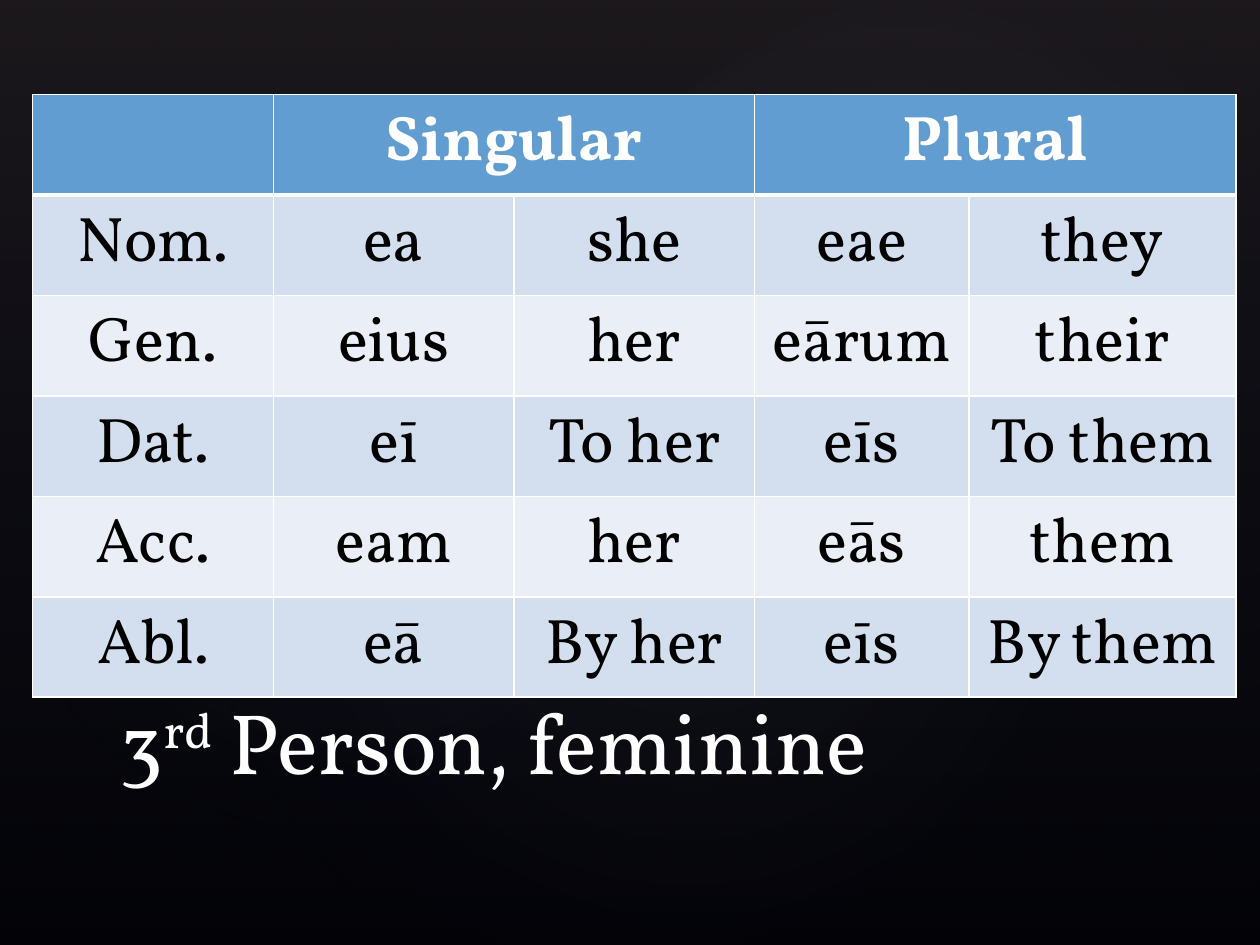
"""Build a slide that declines the feminine third-person Latin pronoun."""
from typing import NamedTuple

import lxml.etree
import pptx
import pptx.dml.color
import pptx.enum.shapes
import pptx.enum.text
import pptx.oxml
import pptx.oxml.ns
import pptx.util

Inches = pptx.util.Inches
FONT = "Vollkorn"
COLORS = {
    "background": "000000", "header": "629DD1", "band": "D3DFEE",
    "light_band": "EAEFF7", "text": "000000", "white": "FFFFFF",
    "shade": "504652", "navy": "242852", "glow": "C4BCC6",
}
COLUMN_WIDTHS = [1.91, 1.91, 1.91, 1.7, 2.12]
ROW_HEIGHT = 0.79
ROWS = [
    ["", "Singular", "", "Plural", ""],
    ["Nom.", "ea", "she", "eae", "they"],
    ["Gen.", "eius", "her", "eārum", "their"],
    ["Dat.", "eī", "To her", "eīs", "To them"],
    ["Acc.", "eam", "her", "eās", "them"],
    ["Abl.", "eā", "By her", "eīs", "By them"],
]


class Stop(NamedTuple):
    position: int
    color: str
    opacity: int


class Backdrop(NamedTuple):
    shape_type: pptx.enum.shapes.MSO_SHAPE
    left: float
    top: float
    width: float
    height: float
    rotation: float
    stops: list[Stop]
    direction: str


LINEAR = '<a:lin ang="5400000" scaled="0"/>'
RADIAL = '<a:path path="circle"><a:fillToRect l="50000" t="50000" r="50000" b="50000"/></a:path>'
OVAL = pptx.enum.shapes.MSO_SHAPE.OVAL


def glow(left: float, top: float, width: float, height: float, rotation: float, opacity: int) -> Backdrop:
    """Describe a soft oval that fades outward."""
    stops = [Stop(0, "glow", opacity), Stop(58, "navy", 0)]
    return Backdrop(OVAL, left, top, width, height, rotation, stops, RADIAL)


BACKDROPS = [
    Backdrop(pptx.enum.shapes.MSO_SHAPE.RECTANGLE, 0, 0, 10, 7.5, 0,
             [Stop(0, "shade", 36), Stop(100, "navy", 10)], LINEAR),
    glow(1.5, 1.14, 7.92, 6.24, 328.7, 7),
    glow(-0.3, 1.28, 6.06, 4.9, 294.3, 8),
    glow(3.58, 0.13, 7.09, 5.2, 328.7, 8),
]


def rgb(name: str) -> pptx.dml.color.RGBColor:
    """Look up a named color."""
    return pptx.dml.color.RGBColor.from_string(COLORS[name])


def draw_backdrop(slide, backdrop: Backdrop) -> None:
    """Draw one translucent gradient shape."""
    box = [Inches(value) for value in backdrop[1:5]]
    shape = slide.shapes.add_shape(backdrop.shape_type, *box)
    shape.rotation = backdrop.rotation
    shape.shadow.inherit = False
    shape.line.fill.background()
    stops = "".join(
        f'<a:gs pos="{stop.position * 1000}"><a:srgbClr val="{COLORS[stop.color]}">'
        f'<a:alpha val="{stop.opacity * 1000}"/></a:srgbClr></a:gs>'
        for stop in backdrop.stops
    )
    gradient = pptx.oxml.parse_xml(
        f'<a:gradFill {pptx.oxml.ns.nsdecls("a")} rotWithShape="1">'
        f'<a:gsLst>{stops}</a:gsLst>{backdrop.direction}</a:gradFill>'
    )
    shape.element.spPr.find(pptx.oxml.ns.qn("a:prstGeom")).addnext(gradient)


def add_run(paragraph, text: str, size: float, color: str, bold: bool = False):
    """Append a formatted run to a paragraph."""
    run = paragraph.add_run()
    run.text = text
    run.font.name = FONT
    run.font.size = pptx.util.Pt(size)
    run.font.bold = bold
    run.font.color.rgb = rgb(color)
    return run


def set_borders(cell, bottom_width: float) -> None:
    """Give a cell white borders."""
    properties = cell._tc.get_or_add_tcPr()
    widths = {"lnL": 1, "lnR": 1, "lnT": 1, "lnB": bottom_width}
    for index, (side, width) in enumerate(widths.items()):
        border = pptx.oxml.parse_xml(
            f'<a:{side} {pptx.oxml.ns.nsdecls("a")} w="{pptx.util.Pt(width)}">'
            f'<a:solidFill><a:srgbClr val="{COLORS["white"]}"/></a:solidFill></a:{side}>'
        )
        properties.insert(index, border)


def draw_table(slide) -> None:
    """Draw the declension table."""
    frame = slide.shapes.add_table(
        len(ROWS), len(COLUMN_WIDTHS), Inches(0.26), Inches(0.75),
        Inches(sum(COLUMN_WIDTHS)), Inches(ROW_HEIGHT * len(ROWS)))
    table = frame.table
    for column, width in zip(table.columns, COLUMN_WIDTHS):
        column.width = Inches(width)
    for row_index, texts in enumerate(ROWS):
        table.rows[row_index].height = Inches(ROW_HEIGHT)
        is_header = row_index == 0
        fill = "header" if is_header else "band" if row_index % 2 else "light_band"
        for column_index, text in enumerate(texts):
            cell = table.cell(row_index, column_index)
            cell.fill.solid()
            cell.fill.fore_color.rgb = rgb(fill)
            set_borders(cell, 3 if is_header else 1)
            if text:
                paragraph = cell.text_frame.paragraphs[0]
                paragraph.alignment = pptx.enum.text.PP_ALIGN.CENTER
                add_run(paragraph, text, 36, "white" if is_header else "text", is_header)
    for first in (1, 3):
        table.cell(0, first).merge(table.cell(0, first + 1))


def draw_title(slide) -> None:
    """Place the title below the table, in front of the backdrop."""
    title = slide.shapes.title
    title.left, title.top, title.width, title.height = map(Inches, (0.85, 5.33, 8.25, 1))
    title.element.getparent().append(title.element)
    frame = title.text_frame
    frame.word_wrap = True
    frame.auto_size = pptx.enum.text.MSO_AUTO_SIZE.NONE
    frame.vertical_anchor = pptx.enum.text.MSO_ANCHOR.BOTTOM
    paragraph = frame.paragraphs[0]
    paragraph.alignment = pptx.enum.text.PP_ALIGN.LEFT
    add_run(paragraph, "3", 49, "white")
    ordinal = add_run(paragraph, "rd", 49, "white")
    ordinal._r.get_or_add_rPr().set("baseline", "30000")
    add_run(paragraph, " Person, feminine", 49, "white")


def main() -> None:
    """Build and save the presentation."""
    presentation = pptx.Presentation()
    presentation.slide_width, presentation.slide_height = Inches(10), Inches(7.5)
    slide = presentation.slides.add_slide(presentation.slide_layouts.get_by_name("Title Only"))
    slide.background.fill.solid()
    slide.background.fill.fore_color.rgb = rgb("background")
    for backdrop in BACKDROPS:
        draw_backdrop(slide, backdrop)
    draw_table(slide)
    draw_title(slide)
    presentation.save("out.pptx")


if __name__ == "__main__":
    main()
